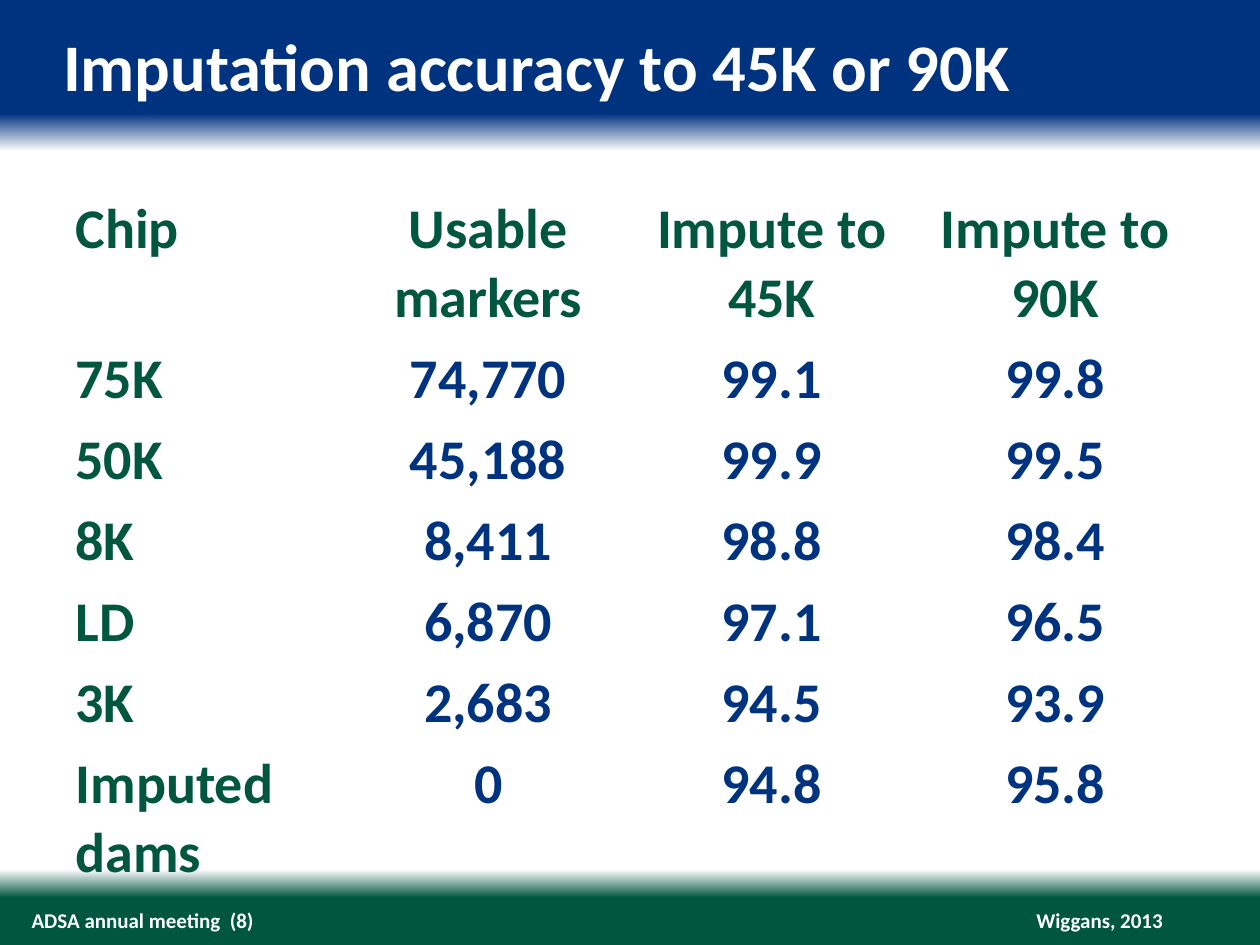
import pptx
import pptx.util
from lxml import etree
from pptx.dml.color import RGBColor
from pptx.enum.text import MSO_ANCHOR, MSO_AUTO_SIZE, PP_ALIGN
from pptx.oxml.ns import qn
from pptx.util import Inches

COLORS = {"blue": "00337F", "green": "00563F", "white": "FFFFFF"}
FONT = "Calibri"
NO_STYLE_NO_GRID = "{2D5ABB26-0587-4C30-8999-92F81FD0307C}"

# Background stops: position in percent, color name
BACKGROUND_STOPS = [(0, "blue"), (12, "blue"), (16, "white"),
                    (92, "white"), (95, "green"), (100, "green")]

ACCURACY_ROWS = [
    ("Chip", "Usable markers", "Impute to 45K", "Impute to 90K"),
    ("75K", "74,770", "99.1", "99.8"),
    ("50K", "45,188", "99.9", "99.5"),
    ("8K", "8,411", "98.8", "98.4"),
    ("LD", "6,870", "97.1", "96.5"),
    ("3K", "2,683", "94.5", "93.9"),
    ("Imputed dams", "0", "94.8", "95.8"),
]


def write_text(text_frame, text, size, color, align=PP_ALIGN.LEFT):
    paragraph = text_frame.paragraphs[0]
    paragraph.alignment = align
    run = paragraph.add_run()
    run.text = text
    run.font.name = FONT
    run.font.size = pptx.util.Pt(size)
    run.font.bold = True
    run.font.color.rgb = RGBColor.from_string(COLORS[color])


def format_frame(text_frame, anchor, wrap=True):
    text_frame.margin_left = text_frame.margin_right = 0
    text_frame.margin_top = text_frame.margin_bottom = 0
    text_frame.vertical_anchor = anchor
    text_frame.word_wrap = wrap
    text_frame.auto_size = MSO_AUTO_SIZE.NONE


def paint_background(slide):
    fill = slide.background.fill
    fill.gradient()
    fill.gradient_angle = 270  # counter-clockwise, so top to bottom
    stop_list = next(slide.element.iter(qn("a:gsLst")))
    for stop in list(stop_list):
        stop_list.remove(stop)
    for percent, color in BACKGROUND_STOPS:
        stop = etree.SubElement(stop_list, qn("a:gs"), pos=str(percent * 1000))
        etree.SubElement(stop, qn("a:srgbClr"), val=COLORS[color])


def place_title(slide, text, left, top, width, height):
    title = slide.shapes.title
    title.left, title.top, title.width, title.height = left, top, width, height
    format_frame(title.text_frame, MSO_ANCHOR.TOP)
    write_text(title.text_frame, text, size=38, color="white")


def add_footer(slide, text, left, top, width, height, align, wrap):
    box = slide.shapes.add_textbox(left, top, width, height)
    format_frame(box.text_frame, MSO_ANCHOR.MIDDLE, wrap)
    write_text(box.text_frame, text, size=12, color="white", align=align)


def add_accuracy_table(slide, rows, left, top, width, row_height):
    frame = slide.shapes.add_table(len(rows), len(rows[0]), left, top,
                                   width, row_height * len(rows))
    table = frame.table
    table.first_row = table.horz_banding = False
    next(frame.element.iter(qn("a:tableStyleId"))).text = NO_STYLE_NO_GRID
    for row_index, row in enumerate(rows):
        for column_index, text in enumerate(row):
            cell = table.cell(row_index, column_index)
            cell.fill.background()
            is_label = row_index == 0 or column_index == 0
            write_text(cell.text_frame, text, size=32,
                       color="green" if is_label else "blue",
                       align=PP_ALIGN.CENTER if column_index else PP_ALIGN.LEFT)


def main():
    presentation = pptx.Presentation()
    presentation.slide_width = Inches(10)
    presentation.slide_height = Inches(7.5)
    slide = presentation.slides.add_slide(presentation.slide_layouts[5])

    paint_background(slide)

    # Footer band
    add_footer(slide, "Wiggans, 2013", Inches(8.21), Inches(7.2),
               Inches(1.02), Inches(0.2), PP_ALIGN.RIGHT, wrap=False)
    add_footer(slide, "ADSA annual meeting  (8)", Inches(0.25), Inches(7.2),
               Inches(5.22), Inches(0.2), PP_ALIGN.LEFT, wrap=True)

    # Title band
    place_title(slide, "Imputation accuracy to 45K or 90K",
                Inches(0.5), Inches(0.2), Inches(9), Inches(0.64))

    # Accuracy by chip; rows grow to fit their text
    add_accuracy_table(slide, ACCURACY_ROWS, Inches(0.5), Inches(1.5),
                       Inches(9), Inches(0.41))

    presentation.save("out.pptx")


if __name__ == "__main__":
    main()
